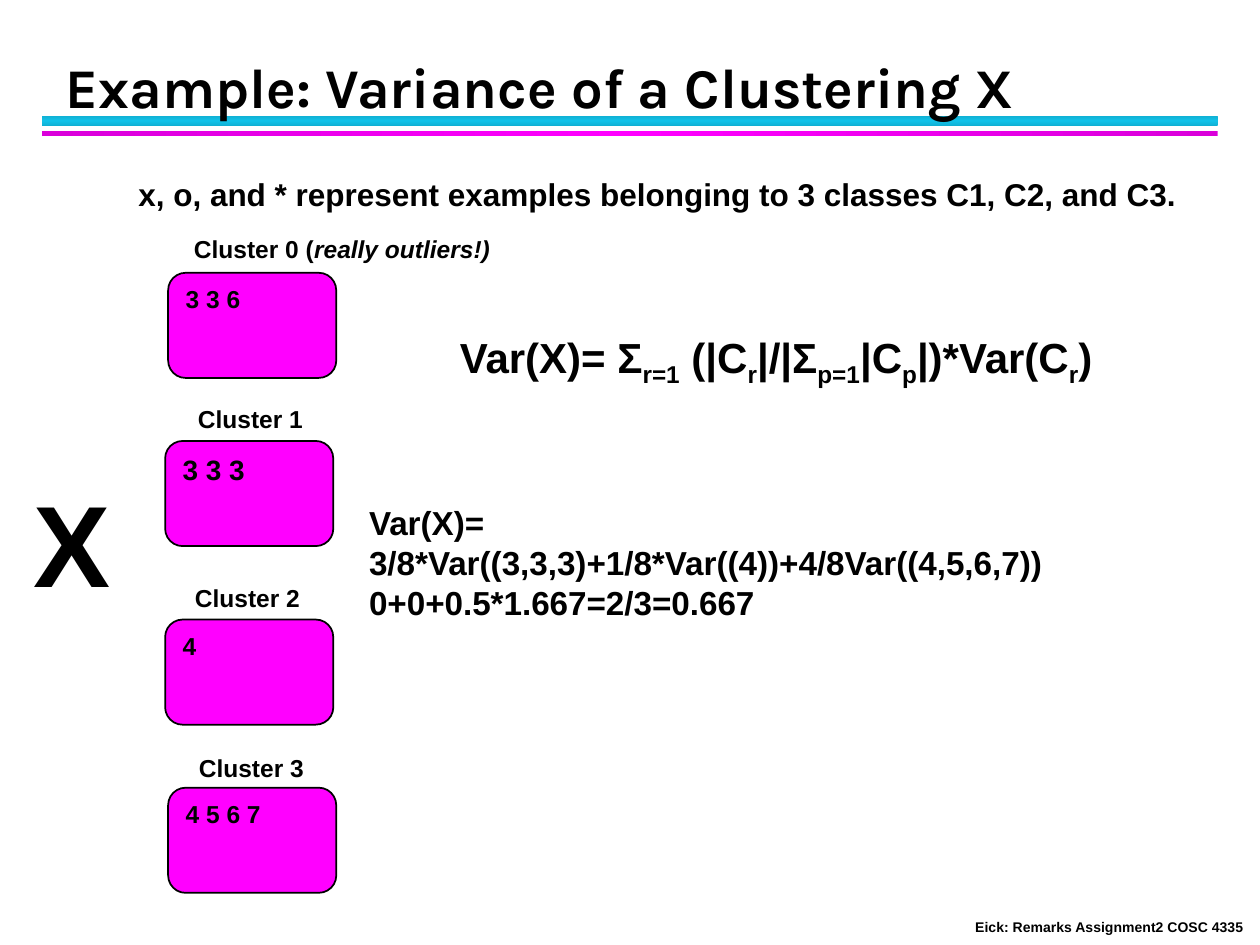
from copy import deepcopy
from dataclasses import dataclass

from pptx import Presentation
from pptx.dml.color import RGBColor
from pptx.enum.shapes import MSO_SHAPE
from pptx.enum.text import MSO_ANCHOR, MSO_AUTO_SIZE, PP_ALIGN
from pptx.oxml.ns import qn
from pptx.util import Cm, Pt

RECTANGLE = MSO_SHAPE.RECTANGLE
ROUNDED = MSO_SHAPE.ROUNDED_RECTANGLE
TOP, BOTTOM = MSO_ANCHOR.TOP, MSO_ANCHOR.BOTTOM
GROW, NO_FIT = MSO_AUTO_SIZE.SHAPE_TO_FIT_TEXT, MSO_AUTO_SIZE.NONE
LEFT = PP_ALIGN.LEFT

COLORS = {
    "text": "000000",
    "cluster": "FF00FF",
    "cyan_edge": "10B0D3",
    "cyan_middle": "12C2E9",
    "magenta_edge": "DA00DA",
    "magenta_middle": "FF00FF",
}
BODY_FONT, TITLE_FONT = "Arial", "Karla"
CLUSTER_WIDTH, CLUSTER_HEIGHT = 3.39, 2.12


@dataclass
class Bar:
    top: float
    height: float
    hue: str
    angle: int


@dataclass
class Cluster:
    label: str
    label_left: float
    label_top: float
    label_width: float
    members: str
    left: float
    top: float
    size: int = 14
    remark: str = ""


@dataclass
class Note:
    text: str
    left: float
    top: float
    width: float
    height: float
    size: int
    wrap: bool = False


BARS = [Bar(2.34, 0.2, "cyan", 90), Bar(2.64, 0.1, "magenta", 0)]

CLUSTERS = [
    Cluster("Cluster 0 (", 3.66, 4.6, 6.5, "3 3 6", 3.39, 5.5, remark="really outliers!)"),
    Cluster("Cluster 1", 3.74, 8.03, 2.64, "3 3 3", 3.33, 8.89, size=16),
    Cluster("Cluster 2", 3.68, 11.63, 2.64, "4", 3.33, 12.49),
    Cluster("Cluster 3", 3.76, 15.06, 2.64, "4 5 6 7", 3.39, 15.88),
]

NOTES = [
    Note("Eick: Remarks Assignment2 COSC 4335", 19.41, 18.39, 5.99, 0.61, 8),
    Note("x, o, and * represent examples belonging to 3 classes C1, C2, and C3.",
         2.54, 3.4, 21.64, 1.02, 18),
    Note("X", 0.43, 9.4, 2.08, 3.07, 66),
    Note("Var(X)=\n3/8*Var((3,3,3)+1/8*Var((4))+4/8Var((4,5,6,7))\n0+0+0.5*1.667=2/3=0.667",
         7.19, 10.01, 14.27, 2.69, 19),
]

# Normal text and subscripts alternate
FORMULA = ["Var(X)= Σ", "r=1", " (|C", "r", "|/|Σ", "p=1", "|C", "p", "|)*Var(C", "r", ")"]


def color(name: str) -> RGBColor:
    return RGBColor.from_string(COLORS[name])


def format_runs(frame, size: int, font: str = BODY_FONT) -> None:
    for paragraph in frame.paragraphs:
        paragraph.alignment = LEFT
        for run in paragraph.runs:
            run.font.name = font
            run.font.size = Pt(size)
            run.font.bold = True
            run.font.color.rgb = color("text")


def add_bar(slide, bar: Bar) -> None:
    stripe = slide.shapes.add_shape(RECTANGLE, Cm(0.85), Cm(bar.top), Cm(23.7), Cm(bar.height))
    stripe.shadow.inherit = False
    stripe.line.fill.background()
    stripe.fill.gradient()
    stripe.fill.gradient_angle = bar.angle
    stop_list = stripe._element.spPr.find(qn("a:gradFill")).find(qn("a:gsLst"))
    stop_list.append(deepcopy(stop_list[0]))
    for stop, position, part in zip(stripe.fill.gradient_stops, (0, 0.5, 1),
                                    ("edge", "middle", "edge")):
        stop.position = position
        stop.color.rgb = color(f"{bar.hue}_{part}")


def add_note(slide, note: Note):
    box = slide.shapes.add_textbox(Cm(note.left), Cm(note.top), Cm(note.width), Cm(note.height))
    frame = box.text_frame
    frame.text = note.text
    frame.word_wrap = note.wrap
    frame.auto_size = GROW
    format_runs(frame, note.size)
    return frame


def add_cluster(slide, cluster: Cluster) -> None:
    card = slide.shapes.add_shape(ROUNDED, Cm(cluster.left), Cm(cluster.top),
                                  Cm(CLUSTER_WIDTH), Cm(CLUSTER_HEIGHT))
    card.shadow.inherit = False
    card.fill.solid()
    card.fill.fore_color.rgb = color("cluster")
    card.line.color.rgb = color("text")
    card.line.width = Pt(1)
    card.text_frame.text = cluster.members
    card.text_frame.vertical_anchor = TOP
    format_runs(card.text_frame, cluster.size)

    label = add_note(slide, Note(cluster.label, cluster.label_left, cluster.label_top,
                                 cluster.label_width, 0.86, 14))
    if cluster.remark:
        remark = label.paragraphs[0].add_run()
        remark.text = cluster.remark
        format_runs(label, 14)
        remark.font.italic = True


def add_formula(slide) -> None:
    frame = add_note(slide, Note("", 9.02, 6.55, 23.8, 2.31, 24, wrap=True))
    for index, part in enumerate(FORMULA):
        run = frame.paragraphs[0].add_run()
        run.text = part
        if index % 2:
            run._r.get_or_add_rPr().set("baseline", "-25000")
    format_runs(frame, 24)


def set_title(slide, text: str) -> None:
    title = slide.shapes.title
    title.left, title.top, title.width, title.height = Cm(1.07), Cm(0.43), Cm(23.01), Cm(2.11)
    frame = title.text_frame
    frame.text = text
    frame.vertical_anchor = BOTTOM
    frame.auto_size = NO_FIT
    frame.paragraphs[0].line_spacing = Pt(36)
    format_runs(frame, 32, TITLE_FONT)
    # Bring the title in front of the bars
    slide.shapes._spTree.append(title._element)


def main() -> None:
    deck = Presentation()
    deck.slide_width, deck.slide_height = Cm(25.4), Cm(19.05)
    slide = deck.slides.add_slide(deck.slide_layouts[5])

    # Header
    for bar in BARS:
        add_bar(slide, bar)
    set_title(slide, "Example: Variance of a Clustering X")

    # Clusters with their labels
    for cluster in CLUSTERS:
        add_cluster(slide, cluster)

    # Explanations, formula and footer
    for note in NOTES:
        add_note(slide, note)
    add_formula(slide)

    deck.save("out.pptx")


if __name__ == "__main__":
    main()
